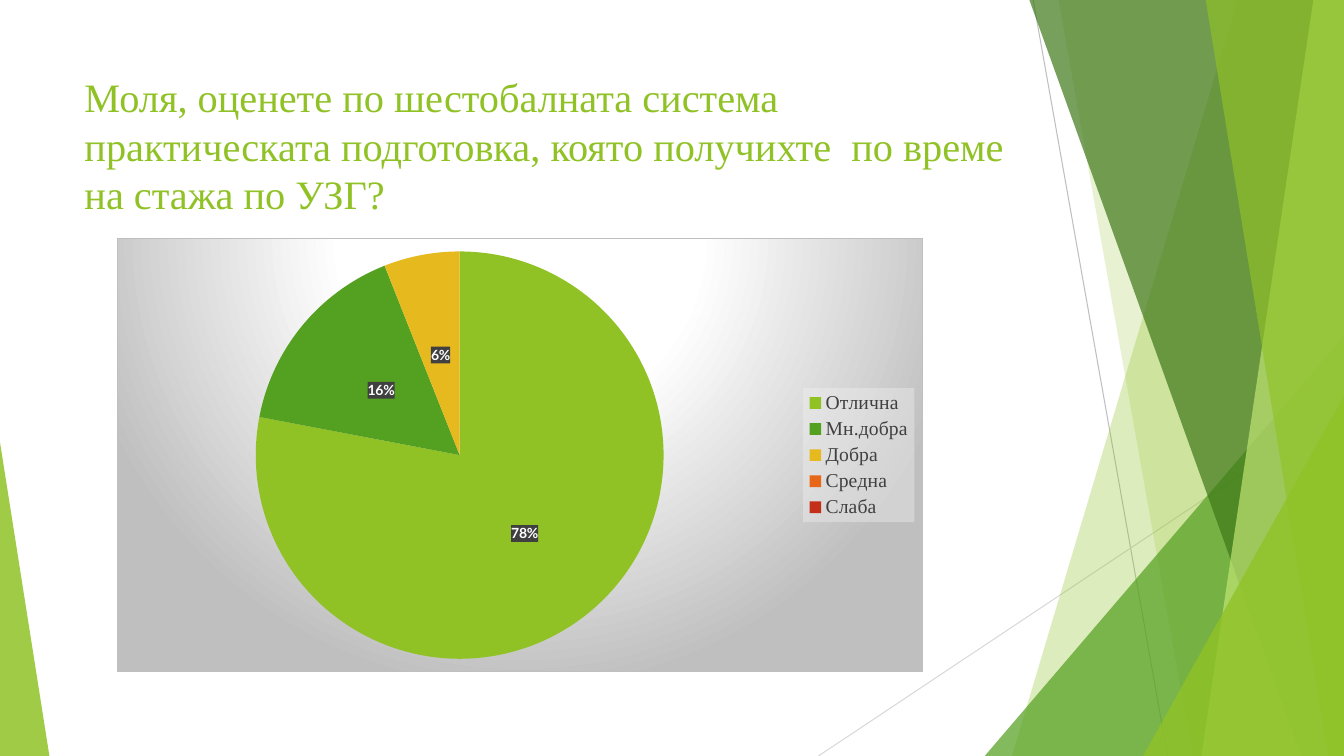
from dataclasses import dataclass

import lxml.etree
import pptx
import pptx.chart.data
import pptx.dml.color
import pptx.enum.chart
import pptx.enum.shapes
import pptx.enum.text
import pptx.oxml
import pptx.oxml.ns
import pptx.util

Pt = pptx.util.Pt
qn = pptx.oxml.ns.qn
WIDTH, HEIGHT = 960, 540
TOP = -0.6
SERIF, SANS = "Times New Roman", "Lato"
COLORS = {
    "lime": "90C226", "green": "54A021", "forest": "3F7819", "pale": "C0E474",
    "yellow": "E6B91E", "orange": "E76618", "red": "C42F1A", "white": "FFFFFF",
    "silver": "BFBFBF", "mist": "D9D9D9", "light": "F2F2F2", "dark": "404040",
}
NAMESPACES = pptx.oxml.ns.nsdecls("a", "c")


@dataclass
class Ray:
    start: tuple[float, float]
    end: tuple[float, float]
    color: str


@dataclass
class Band:
    """A band reaching the right slide edge, slanted on its left side."""
    top_x: float
    bottom_x: float
    color: str
    opacity: int


@dataclass
class Wedge:
    left: float
    top: float
    width: float
    apex: float
    color: str
    opacity: int


@dataclass
class Rating:
    label: str
    percent: int | None
    color: str


RAYS = [
    Ray((738, 0), (834, HEIGHT), "silver"),
    Ray((WIDTH, 290), (584.6, HEIGHT), "mist"),
]
FACETS = [
    Band(884.2, 722.9, "lime", 30),
    Band(756, 851.8, "lime", 20),
    Wedge(703.4, 240, 256.6, 1, "green", 72),
    Band(735.1, 929.5, "forest", 70),
    Band(938.2, 858.2, "pale", 70),
    Band(861.1, 949, "lime", 65),
    Wedge(816.5, 283, 143.5, 1, "lime", 80),
    Wedge(0, 316, 35.3, 0, "lime", 85),
]
RATINGS = [
    Rating("Отлична", 78, "lime"),
    Rating("Мн.добра", 16, "green"),
    Rating("Добра", 6, "yellow"),
    Rating("Средна", None, "orange"),
    Rating("Слаба", None, "red"),
]
QUESTION = ("Моля, оценете по шестобалната система практическата подготовка, "
            "която получихте  по време на стажа по УЗГ?")


def rgb(name: str) -> pptx.dml.color.RGBColor:
    return pptx.dml.color.RGBColor.from_string(COLORS[name])


def style_font(font, face: str, size: float, color: str, bold: bool = False) -> None:
    font.name, font.size, font.bold = face, Pt(size), bold
    font.color.rgb = rgb(color)


def draw_ray(shapes, ray: Ray) -> None:
    line = shapes.add_connector(pptx.enum.shapes.MSO_CONNECTOR.STRAIGHT,
                                *map(Pt, ray.start + ray.end))
    line.line.color.rgb = rgb(ray.color)
    line.line.width = Pt(0.75)
    lxml.etree.SubElement(line._element.spPr, qn("a:effectLst"))


def draw_facet(shapes, facet: Band | Wedge) -> None:
    if isinstance(facet, Band):
        builder = shapes.build_freeform(Pt(facet.top_x), Pt(TOP), scale=1.0)
        corners = [(WIDTH, TOP), (WIDTH, HEIGHT), (facet.bottom_x, HEIGHT)]
        builder.add_line_segments([(Pt(x), Pt(y)) for x, y in corners], close=True)
        shape = builder.convert_to_shape()
    else:
        shape = shapes.add_shape(
            pptx.enum.shapes.MSO_SHAPE.ISOSCELES_TRIANGLE, Pt(facet.left),
            Pt(facet.top), Pt(facet.width), Pt(HEIGHT - facet.top))
        shape.adjustments[0] = facet.apex
    shape.shadow.inherit = False
    shape.line.fill.background()
    shape.fill.solid()
    shape.fill.fore_color.rgb = rgb(facet.color)
    tint = shape._element.spPr.find(qn("a:solidFill"))[0]
    lxml.etree.SubElement(tint, qn("a:alpha"), val=str(facet.opacity * 1000))


def chart_fill(color: str, opacity: int):
    return pptx.oxml.parse_xml(
        f'<c:spPr {NAMESPACES}><a:solidFill><a:srgbClr val="{COLORS[color]}">'
        f'<a:alpha val="{opacity * 1000}"/></a:srgbClr></a:solidFill></c:spPr>')


def draw_question(shapes) -> None:
    question = shapes.add_textbox(Pt(53.3), Pt(48.2), Pt(676.8), Pt(103.7))
    frame = question.text_frame
    frame.word_wrap = True
    frame.vertical_anchor = pptx.enum.text.MSO_ANCHOR.TOP
    frame.text = QUESTION
    style_font(frame.paragraphs[0].runs[0].font, SERIF, 28.8, "lime")


def draw_ratings(shapes) -> None:
    data = pptx.chart.data.CategoryChartData(number_format="0")
    data.categories = [rating.label for rating in RATINGS]
    data.add_series("Series 1", [rating.percent for rating in RATINGS])
    chart = shapes.add_chart(pptx.enum.chart.XL_CHART_TYPE.PIE, Pt(83.5), Pt(170),
                             Pt(576), Pt(310.3), data).chart
    chart.has_title = False
    chart.font.name, chart.font.size = SANS, Pt(10)

    # Slices
    pie = chart.plots[0]
    pie.vary_by_categories = True
    for index, rating in enumerate(RATINGS):
        fill = pie.series[0].points[index].format.fill
        fill.solid()
        fill.fore_color.rgb = rgb(rating.color)

    # Percent labels
    pie.has_data_labels = True
    labels = pie.data_labels
    labels.show_percentage, labels.show_value = True, False
    labels.number_format, labels.number_format_is_linked = "0%", False
    labels.position = pptx.enum.chart.XL_LABEL_POSITION.CENTER
    style_font(labels.font, SANS, 10, "white", bold=True)
    labels._element.find(qn("c:txPr")).addprevious(chart_fill("dark", 90))

    # Legend
    chart.has_legend = True
    legend = chart.legend
    legend.position = pptx.enum.chart.XL_LEGEND_POSITION.RIGHT
    legend.include_in_layout = False
    style_font(legend.font, SERIF, 14, "dark")
    legend._element.find(qn("c:txPr")).addprevious(chart_fill("light", 39))

    # Pie placement
    area = chart._chartSpace.chart.plotArea
    for old in area.findall(qn("c:layout")):
        area.remove(old)
    place = {"x": 0.17, "y": 0.03, "w": 0.51, "h": 0.94}
    area.insert(0, pptx.oxml.parse_xml(
        f'<c:layout {NAMESPACES}><c:manualLayout><c:layoutTarget val="inner"/>'
        '<c:xMode val="edge"/><c:yMode val="edge"/>'
        + "".join(f'<c:{key} val="{value}"/>' for key, value in place.items())
        + "</c:manualLayout></c:layout>"))

    # Radial backdrop
    stops = "".join(
        f'<a:gs pos="{position * 1000}"><a:srgbClr val="{COLORS[color]}"/></a:gs>'
        for position, color in [(0, "white"), (39, "white"), (100, "silver")])
    chart._chartSpace.chart.addnext(pptx.oxml.parse_xml(
        f'<c:spPr {NAMESPACES}><a:gradFill><a:gsLst>{stops}</a:gsLst>'
        '<a:path path="circle"><a:fillToRect l="50000" t="-80000" r="50000" '
        'b="180000"/></a:path></a:gradFill><a:ln w="9525"><a:solidFill>'
        f'<a:srgbClr val="{COLORS["silver"]}"/></a:solidFill></a:ln></c:spPr>'))


def main() -> None:
    deck = pptx.Presentation()
    deck.slide_width, deck.slide_height = Pt(WIDTH), Pt(HEIGHT)
    shapes = deck.slides.add_slide(deck.slide_layouts[6]).shapes
    for ray in RAYS:
        draw_ray(shapes, ray)
    for facet in FACETS:
        draw_facet(shapes, facet)
    draw_question(shapes)
    draw_ratings(shapes)
    deck.save("out.pptx")


if __name__ == "__main__":
    main()
